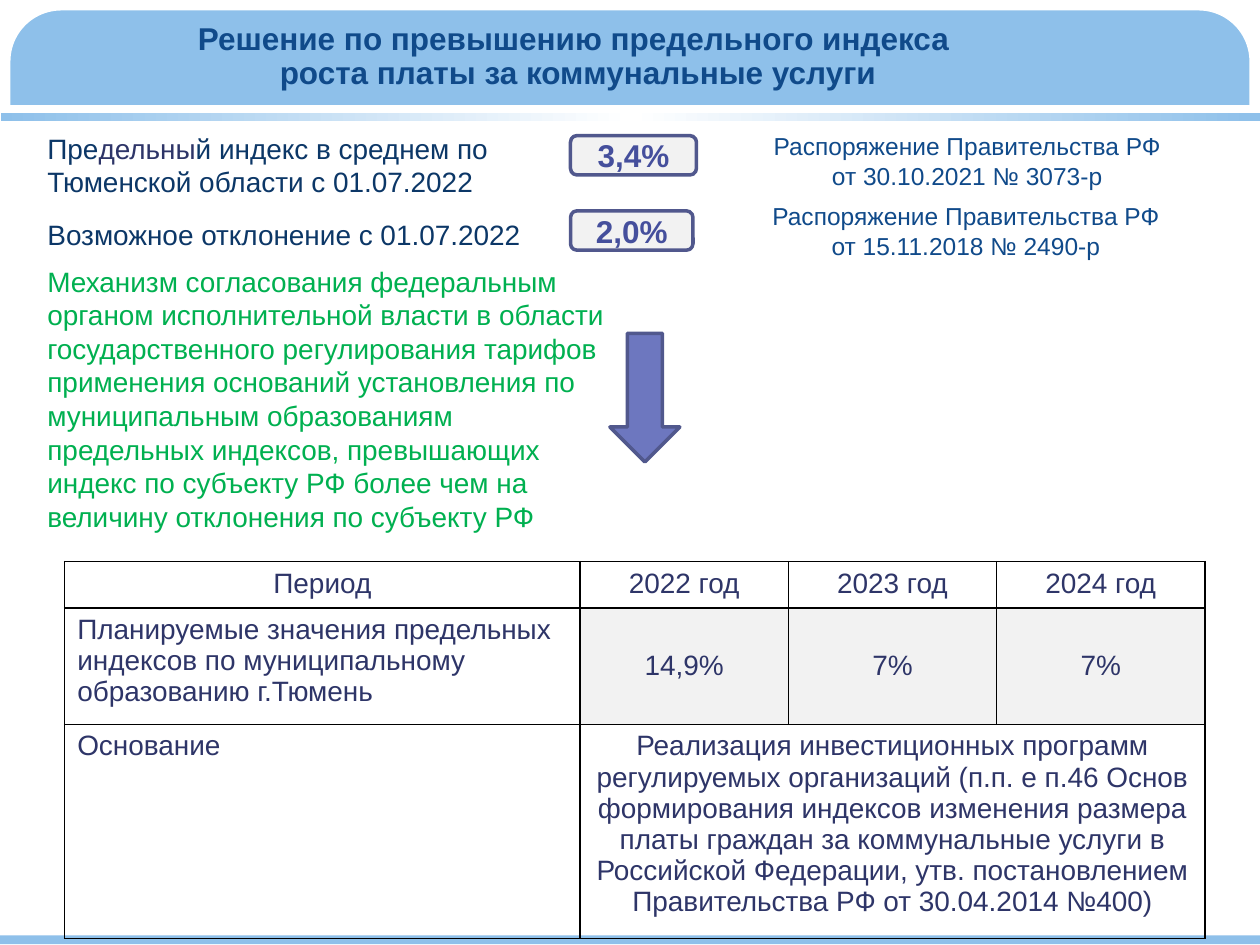
"""Build the slide on the limit index for utility payments."""
from copy import deepcopy
from dataclasses import dataclass

from lxml import etree
from pptx import Presentation
from pptx.dml.color import RGBColor
from pptx.enum.shapes import MSO_SHAPE
from pptx.enum.text import MSO_ANCHOR, PP_ALIGN
from pptx.oxml.ns import qn
from pptx.util import Pt

RECT = MSO_SHAPE.RECTANGLE
ROUND = MSO_SHAPE.ROUNDED_RECTANGLE
DOWN = MSO_SHAPE.DOWN_ARROW
LEFT, CENTER = PP_ALIGN.LEFT, PP_ALIGN.CENTER
TOP, MIDDLE = MSO_ANCHOR.TOP, MSO_ANCHOR.MIDDLE
WIDE, HIGH = 720, 540


@dataclass(frozen=True)
class Theme:
    font: str = "Arial"
    sky: str = "8EC0EA"
    white: str = "FFFFFF"
    black: str = "000000"
    pale: str = "F2F2F2"
    navy: str = "0C3767"
    blue: str = "104A8A"
    ink: str = "2E3568"
    edge: str = "51588D"
    value: str = "454F9C"
    arrow: str = "6D77BF"
    green: str = "00B050"
    head: int = 18
    body: int = 16
    note: int = 14


class Deck:
    def __init__(self, theme, slide):
        self.theme = theme
        self.slide = slide

    def style(self, run, size, color, bold=False):
        font = run.font
        font.name, font.size, font.bold = self.theme.font, Pt(size), bold
        font.color.rgb = RGBColor.from_string(color)

    def fill_text(self, frame, text, size, color, align=LEFT, bold=False):
        frame.text = text
        frame.word_wrap = True
        for para in frame.paragraphs:
            para.alignment = align
            for run in para.runs:
                self.style(run, size, color, bold)

    def paint(self, shape, fill, line=None, width=2):
        shape.shadow.inherit = False
        if fill:
            shape.fill.solid()
            shape.fill.fore_color.rgb = RGBColor.from_string(fill)
        else:
            shape.fill.background()
        if line:
            shape.line.color.rgb = RGBColor.from_string(line)
            shape.line.width = Pt(width)
        else:
            shape.line.fill.background()

    def shape(self, kind, box, fill, line=None, width=2):
        item = self.slide.shapes.add_shape(kind, *map(Pt, box))
        self.paint(item, fill, line, width)
        return item

    def fade(self, box, colors):
        item = self.shape(RECT, box, colors[0])
        item.fill.gradient()
        item.fill.gradient_angle = 0
        stops = item._element.spPr.find(".//" + qn("a:gsLst"))
        stops.append(deepcopy(stops[0]))
        for step, (stop, color) in enumerate(zip(item.fill.gradient_stops, colors)):
            stop.position = step / (len(colors) - 1)
            stop.color.rgb = RGBColor.from_string(color)

    def corner(self, right, low):
        curve = [(0, 36), (10, 18), (20, 5), (36, 0), (0, 0)]
        spots = [(Pt(WIDE - x if right else x), Pt(HIGH - y if low else y))
                 for x, y in curve]
        outline = self.slide.shapes.build_freeform(*spots[0])
        outline.add_line_segments(spots[1:], close=True)
        self.paint(outline.convert_to_shape(), self.theme.white)

    def label(self, box, text, size, color, align=LEFT, bold=False):
        frame = self.slide.shapes.add_textbox(*map(Pt, box)).text_frame
        self.fill_text(frame, text, size, color, align, bold)
        return frame

    def blend(self, box, parts, size):
        frame = self.label(box, "", size, self.theme.navy)
        for text, color in parts:
            run = frame.paragraphs[0].add_run()
            run.text = text
            self.style(run, size, color)

    def badge(self, box, text):
        look = self.theme
        frame = self.shape(ROUND, box, look.pale, look.edge).text_frame
        frame.vertical_anchor = MIDDLE
        self.fill_text(frame, text, look.head, look.value, CENTER, True)

    def border(self, cell):
        props = cell._tc.get_or_add_tcPr()
        for side in ("lnL", "lnR", "lnT", "lnB"):
            line = etree.SubElement(props, qn("a:" + side), w=str(Pt(1)))
            fill = etree.SubElement(line, qn("a:solidFill"))
            etree.SubElement(fill, qn("a:srgbClr"), val=self.theme.black)

    def table(self, spot, cols, rows, data):
        look = self.theme
        box = (*spot, sum(cols), sum(rows))
        grid = self.slide.shapes.add_table(len(rows), len(cols), *map(Pt, box)).table
        grid.first_row = grid.horz_banding = False
        for col, width in zip(grid.columns, cols):
            col.width = Pt(width)
        for row, height in zip(grid.rows, rows):
            row.height = Pt(height)
        for r, texts in enumerate(data):
            for c in range(len(cols)):
                cell = grid.cell(r, c)
                self.border(cell)
                shade = r == 1 and c > 0
                if shade:
                    cell.fill.solid()
                    cell.fill.fore_color.rgb = RGBColor.from_string(look.pale)
                else:
                    cell.fill.background()
                cell.vertical_anchor = MIDDLE if shade else TOP
                if c < len(texts):
                    align = CENTER if r == 0 or c else LEFT
                    self.fill_text(cell.text_frame, texts[c], look.body, look.ink, align)
            if len(texts) < len(cols):
                grid.cell(r, len(texts) - 1).merge(grid.cell(r, len(cols) - 1))


def main():
    look = Theme()
    show = Presentation()
    show.slide_width, show.slide_height = Pt(WIDE), Pt(HIGH)
    deck = Deck(look, show.slides.add_slide(show.slide_layouts[6]))

    deck.shape(RECT, (0, 0, WIDE, 60), look.sky)
    frame = deck.shape(ROUND, (3, 3, WIDE - 6, HIGH - 6), None, look.white, 6)
    frame.adjustments[0] = 0.06
    for low in (False, True):
        for right in (False, True):
            deck.corner(right, low)
    deck.shape(RECT, (0, 534.5, WIDE, 5), look.sky)
    deck.fade((0.5, 64.5, WIDE, 5), (look.sky, look.white, look.sky))

    title = deck.label(
        (43, 8.5, 569.5, 48),
        "Решение по превышению предельного индекса\v роста платы за коммунальные услуги",
        look.head, look.blue, CENTER, True)
    title.vertical_anchor = MIDDLE
    title.paragraphs[0].line_spacing = 0.9

    deck.blend((20, 71.5, 310.5, 46), (
        ("Пре", look.navy), ("дельны", look.ink),
        ("й индекс в среднем по Тюменской области с 01.07.2022", look.navy),
    ), look.body)
    deck.label((20, 120.5, 317.5, 26.5), "Возможное отклонение с 01.07.2022",
               look.body, look.navy)
    deck.label(
        (20, 147.5, 335, 163),
        "Механизм согласования федеральным органом исполнительной власти в области "
        "государственного регулирования тарифов применения оснований установления по "
        "муниципальным образованиям предельных индексов, превышающих индекс по "
        "субъекту РФ более чем на величину отклонения по субъекту РФ",
        look.body, look.green)

    deck.badge((326, 77.5, 72, 22.5), "3,4%")
    deck.badge((326, 120.5, 70, 22.5), "2,0%")
    for box, act in (((433.5, 71.5, 238.5, 41), "от 30.10.2021 № 3073-р"),
                     ((427.5, 111.5, 249, 41), "от 15.11.2018 № 2490-р")):
        deck.label(box, "Распоряжение Правительства РФ\n" + act,
                   look.note, look.blue, CENTER)

    deck.table((37, 321), (294.5, 119, 119, 119), (26.5, 66.5, 122), (
        ("Период", "2022 год", "2023 год", "2024 год"),
        ("Планируемые значения предельных индексов по муниципальному "
         "образованию г.Тюмень", "14,9%", "7%", "7%"),
        ("Основание",
         "Реализация инвестиционных программ регулируемых организаций "
         "(п.п. е п.46 Основ формирования индексов изменения размера платы "
         "граждан за коммунальные услуги в Российской Федерации, утв. "
         "постановлением Правительства РФ от 30.04.2014 №400)"),
    ))
    deck.shape(DOWN, (348.5, 190.5, 40, 73.5), look.arrow, look.edge)
    show.save("out.pptx")


if __name__ == "__main__":
    main()
